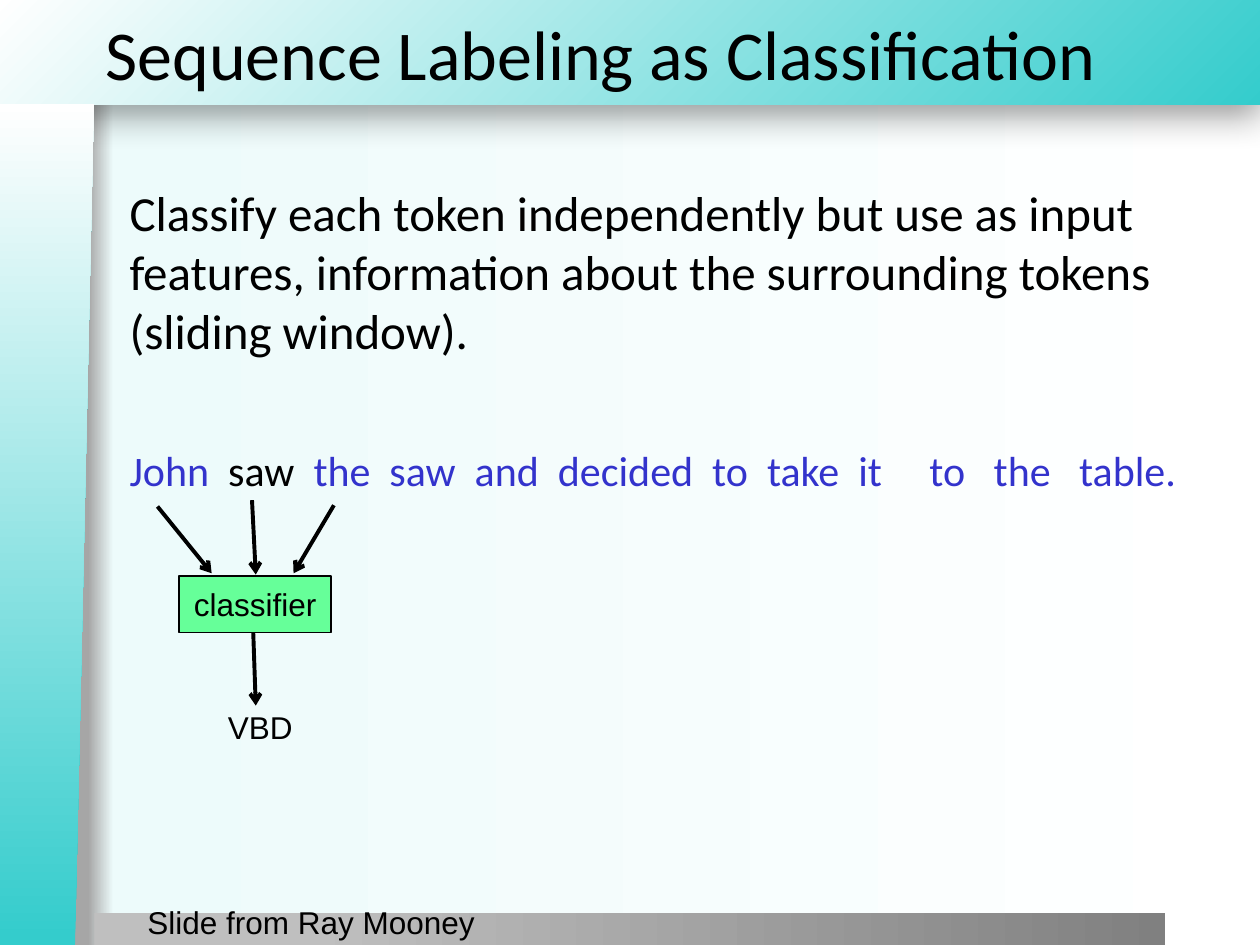
from dataclasses import dataclass

from lxml import etree
from pptx import Presentation
from pptx.dml.color import RGBColor
from pptx.enum import shapes as es, text as et
from pptx.oxml import ns, parse_xml
from pptx.util import Inches, Pt

KIND = es.MSO_SHAPE
MID = et.MSO_ANCHOR.MIDDLE
TOP = et.MSO_ANCHOR.TOP
LEFT = et.PP_ALIGN.LEFT
MAIN = et.PP_ALIGN.CENTER


@dataclass(frozen=True)
class Theme:
    head: str = "Calibri"
    tag: str = "Arial"
    ink: str = "000000"
    blue: str = "3333CC"
    green: str = "66FF99"
    teal: str = "34CCCC"
    white: str = "FFFFFF"
    title: int = 40
    body: int = 28
    words: int = 24
    small: int = 18


@dataclass(frozen=True)
class Box:
    x: float
    y: float
    w: float
    h: float

    def place(self) -> tuple:
        return tuple(Inches(v) for v in (self.x, self.y, self.w, self.h))


@dataclass(frozen=True)
class Label:
    box: Box
    runs: tuple
    font: str
    size: int
    align: et.PP_ALIGN = LEFT
    anchor: et.MSO_ANCHOR = TOP
    inset: bool = True
    wrap: bool = True


@dataclass(frozen=True)
class Arrow:
    x1: float
    y1: float
    x2: float
    y2: float


T = Theme()
LABELS = (
    Label(Box(0.74, -0.08, 9.26, 1),
          (("Sequence Labeling as Classification", T.ink),),
          T.head, T.title, anchor=MID),
    Label(Box(0.93, 1.4, 8.5, 5.73),
          (("Classify each token independently but use as input features, "
            "information about the surrounding tokens (sliding window).", T.ink),),
          T.head, T.body),
    Label(Box(0.93, 3.48, 8.82, 0.51),
          (("John  ", T.blue), ("saw ", T.ink),
           (" the  saw  and  decided  to  take  it     to   the   table.", T.blue)),
          T.head, T.words, wrap=False),
    Label(Box(1.67, 5.57, 0.79, 0.43), (("VBD", T.ink),),
          T.tag, T.small, MAIN, wrap=False),
    Label(Box(1.17, 7.17, 3.42, 0.25), (("Slide from Ray Mooney", T.ink),),
          T.tag, T.small, inset=False),
)
NODE = Label(Box(1.42, 4.57, 1.21, 0.45), (("classifier", T.ink),),
             T.tag, T.small, MAIN, MID, wrap=False)
ARROWS = (
    Arrow(1.25, 4.02, 1.68, 4.55),
    Arrow(2.65, 4.01, 2.33, 4.55),
    Arrow(2, 3.97, 2.03, 4.56),
    Arrow(2.01, 5.02, 2.03, 5.6),
)
LINEAR = '<a:lin ang="0" scaled="0"/>'
CORNER = '<a:path path="circle"><a:fillToRect l="100000" t="100000"/></a:path>'


def blend(host, stops: tuple, mode: str = LINEAR) -> None:
    old = host.find(ns.qn("a:solidFill"))
    marks = "".join(f'<a:gs pos="{pos * 1000}"><a:srgbClr val="{hue}"/></a:gs>'
                    for pos, hue in stops)
    host.replace(old, parse_xml(
        f'<a:gradFill {ns.nsdecls("a")} rotWithShape="1">'
        f'<a:gsLst>{marks}</a:gsLst>{mode}</a:gradFill>'))


def band(slide, kind: KIND, box: Box, stops: tuple, mode: str = LINEAR):
    shape = slide.shapes.add_shape(kind, *box.place())
    shape.shadow.inherit = False
    shape.line.fill.background()
    shape.fill.solid()
    blend(shape.element.spPr, stops, mode)
    return shape


def shade(shape) -> None:
    group = shape.element.spPr.find(ns.qn("a:effectLst"))
    group.append(parse_xml(
        f'<a:outerShdw {ns.nsdecls("a")} blurRad="{Pt(20)}" dist="{Pt(6)}" '
        'dir="5400000" rotWithShape="0"><a:srgbClr val="000000">'
        '<a:alpha val="40000"/></a:srgbClr></a:outerShdw>'))


def write(shape, label: Label) -> None:
    frame = shape.text_frame
    frame.word_wrap = label.wrap
    frame.vertical_anchor = label.anchor
    frame.margin_left = frame.margin_right = Inches(0.1 * label.inset)
    frame.margin_top = frame.margin_bottom = Inches(0.05 * label.inset)
    para = frame.paragraphs[0]
    para.alignment = label.align
    para.font.name = label.font
    para.font.size = Pt(label.size)
    for words, hue in label.runs:
        run = para.add_run()
        run.text = words
        run.font.color.rgb = RGBColor.from_string(hue)


def node(slide, label: Label) -> None:
    shape = slide.shapes.add_shape(KIND.RECTANGLE, *label.box.place())
    shape.shadow.inherit = False
    shape.fill.solid()
    shape.fill.fore_color.rgb = RGBColor.from_string(T.green)
    shape.line.color.rgb = RGBColor.from_string(T.ink)
    shape.line.width = Pt(1)
    write(shape, label)


def link(slide, arrow: Arrow) -> None:
    ends = (Inches(v) for v in (arrow.x1, arrow.y1, arrow.x2, arrow.y2))
    line = slide.shapes.add_connector(es.MSO_CONNECTOR.STRAIGHT, *ends)
    line.line.color.rgb = RGBColor.from_string(T.ink)
    line.line.width = Pt(2.25)
    etree.SubElement(line.line._get_or_add_ln(), ns.qn("a:tailEnd"), type="arrow")
    etree.SubElement(line.element.spPr, ns.qn("a:effectLst"))


def frame(slide) -> None:
    slide.background.fill.solid()
    blend(next(slide.element.iter(ns.qn("p:bgPr"))),
          ((7, "A6A6A6"), (9, "EDFBFB"), (100, T.white)))
    fade = (T.teal, T.white)
    head = band(slide, KIND.RECTANGLE, Box(-0.01, 0, 10.01, 0.83),
                tuple(zip((0, 100), fade)), CORNER)
    shade(head)
    band(slide, KIND.RECTANGLE, Box(0.75, 7.25, 8.5, 0.26),
         ((20, "BFBFBF"), (100, "808080")))
    side = band(slide, KIND.FLOWCHART_MANUAL_INPUT, Box(-2.97, 3.79, 6.68, 0.75),
                tuple(zip((1, 100), fade)))
    side.rotation = 270
    side.element.spPr.find(ns.qn("a:xfrm")).set("flipV", "1")


def main() -> None:
    deck = Presentation()
    deck.slide_width, deck.slide_height = Inches(10), Inches(7.5)
    slide = deck.slides.add_slide(deck.slide_layouts[6])
    frame(slide)
    for label in LABELS:
        write(slide.shapes.add_textbox(*label.box.place()), label)
    node(slide, NODE)
    for arrow in ARROWS:
        link(slide, arrow)
    deck.save("out.pptx")


if __name__ == "__main__":
    main()
